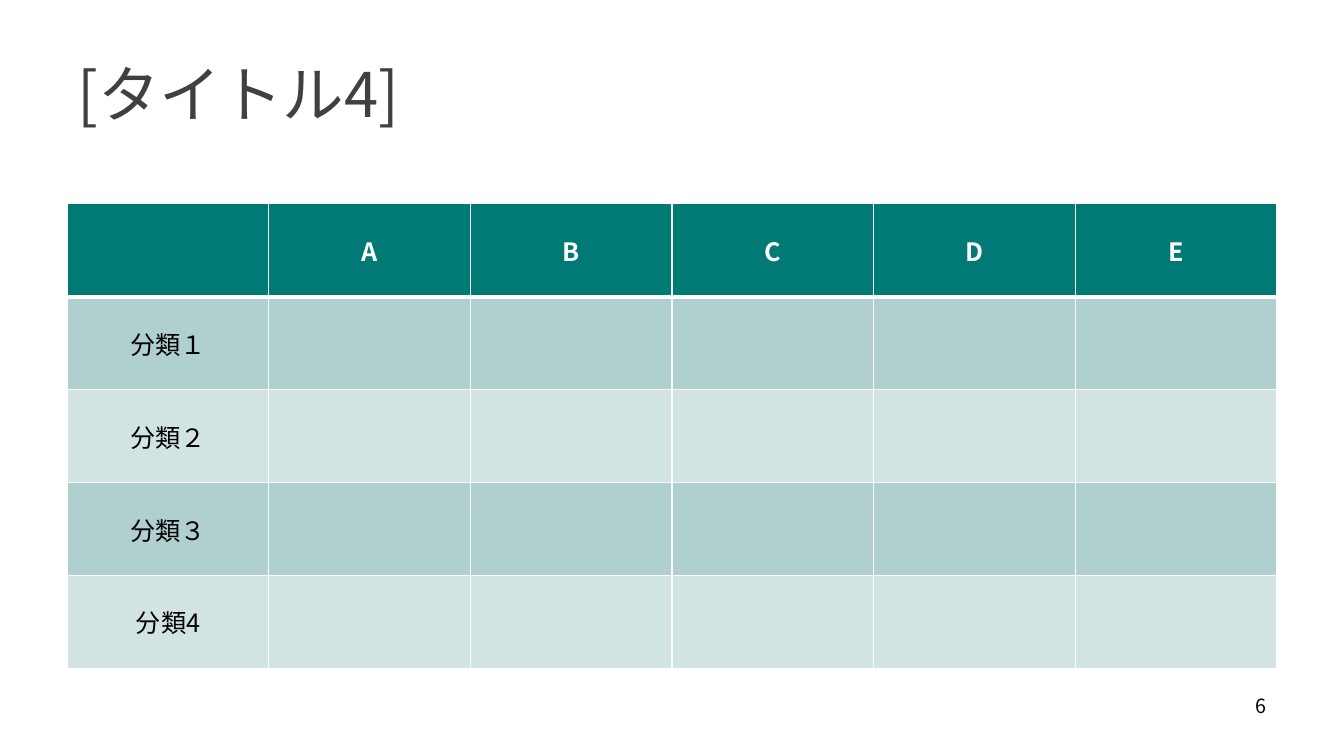
from collections import namedtuple
from dataclasses import dataclass

from lxml.etree import SubElement
from pptx import Presentation
from pptx.dml.color import RGBColor
from pptx.enum.text import MSO_ANCHOR, MSO_AUTO_SIZE, PP_ALIGN
from pptx.oxml.ns import qn
from pptx.util import Pt

Box = namedtuple("Box", "left top width height")


@dataclass(frozen=True)
class Theme:
    """Colours, type sizes and line widths of the deck."""

    font: str = "Noto Sans CJK JP"
    title_ink: str = "404040"
    ink: str = "000000"
    white: str = "FFFFFF"
    header: str = "017975"
    band: str = "1A7975"
    band_opacities: tuple = (35, 20)
    title_size: int = 44
    table_size: int = 18
    number_size: int = 14
    rule: int = 1
    header_rule: int = 3


THEME = Theme()
COLUMNS = ["", "A", "B", "C", "D", "E"]
CATEGORIES = ["分類１", "分類２", "分類３", "分類4"]


def write(frame, text, size, color, bold=False, align=PP_ALIGN.LEFT):
    """Put one formatted line of text in a text frame."""
    para = frame.paragraphs[0]
    para.alignment = align
    span = para.add_run()
    span.text = text
    span.font.size = Pt(size)
    span.font.bold = bold
    span.font.color.rgb = RGBColor.from_string(color)
    span.font.name = THEME.font
    SubElement(span.font._element, qn("a:ea"), typeface=THEME.font)


def rule_cell(cell, top, bottom):
    """Draw the four white borders of a cell."""
    properties = cell._tc.get_or_add_tcPr()
    widths = {"L": THEME.rule, "R": THEME.rule, "T": top, "B": bottom}
    for side, width in widths.items():
        line = SubElement(properties, qn(f"a:ln{side}"), w=str(Pt(width)))
        fill = SubElement(line, qn("a:solidFill"))
        SubElement(fill, qn("a:srgbClr"), val=THEME.white)


def fill_cell(cell, color, opacity=100):
    """Fill a cell with a colour at an opacity in percent."""
    cell.fill.solid()
    cell.fill.fore_color.rgb = RGBColor.from_string(color)
    if opacity < 100:
        shade = cell._tc.tcPr.find(f"{qn('a:solidFill')}/{qn('a:srgbClr')}")
        SubElement(shade, qn("a:alpha"), val=str(opacity * 1000))


def add_title(page, box, text):
    """Place the page title in its placeholder."""
    title = page.shapes.title
    title.left, title.top, title.width, title.height = map(Pt, box)
    frame = title.text_frame
    frame.auto_size = MSO_AUTO_SIZE.NONE
    frame.vertical_anchor = MSO_ANCHOR.MIDDLE
    write(frame, text, size=THEME.title_size, color=THEME.title_ink)


def add_category_table(page, box, columns, categories):
    """Place a banded table with a header row and a category column."""
    rows = [columns] + [[name] + [""] * (len(columns) - 1) for name in categories]
    table = page.shapes.add_table(len(rows), len(columns), *map(Pt, box)).table
    for column in table.columns:
        column.width = Pt(box.width / len(columns))
    for index, texts in enumerate(rows):
        is_header = index == 0
        table.rows[index].height = Pt(box.height / len(rows))
        top = THEME.header_rule if index == 1 else THEME.rule
        bottom = THEME.header_rule if is_header else THEME.rule
        for cell, text in zip(table.rows[index].cells, texts):
            rule_cell(cell, top, bottom)
            if is_header:
                fill_cell(cell, THEME.header)
            else:
                fill_cell(cell, THEME.band, THEME.band_opacities[(index - 1) % 2])
            cell.vertical_anchor = MSO_ANCHOR.MIDDLE
            if text:
                write(cell.text_frame, text, size=THEME.table_size, bold=is_header,
                      color=THEME.white if is_header else THEME.ink,
                      align=PP_ALIGN.CENTER)


def add_page_number(page, box, number):
    """Place the page number at the right of its box."""
    frame = page.shapes.add_textbox(*map(Pt, box)).text_frame
    frame.word_wrap = True
    write(frame, str(number), size=THEME.number_size, color=THEME.ink,
          align=PP_ALIGN.RIGHT)


def main():
    """Build the deck and save it."""
    deck = Presentation()
    deck.slide_width, deck.slide_height = Pt(960), Pt(540)
    page = deck.slides.add_slide(deck.slide_layouts[5])
    add_title(page, Box(48, 21.6, 864, 90), "[タイトル4]")
    add_category_table(page, Box(48, 145.5, 864, 332), COLUMNS, CATEGORIES)
    add_page_number(page, Box(688, 492, 224, 37.5), 6)
    deck.save("out.pptx")


if __name__ == "__main__":
    main()
